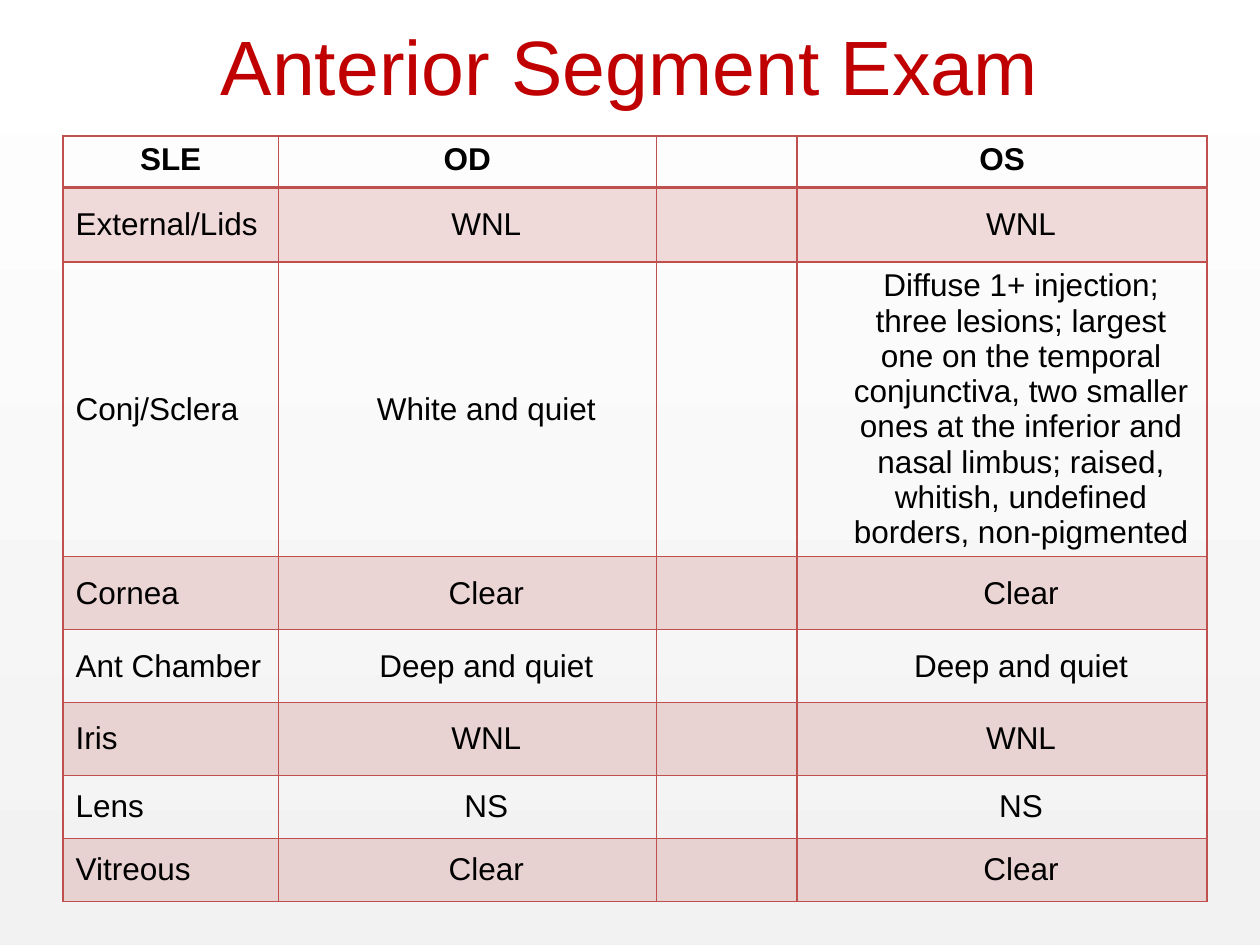
import dataclasses
import typing

import lxml.etree
import pptx
import pptx.dml.color
import pptx.enum.text
import pptx.oxml.ns
import pptx.util

Cm = pptx.util.Cm
Pt = pptx.util.Pt
Color = pptx.dml.color.RGBColor
Align = pptx.enum.text.PP_ALIGN
Anchor = pptx.enum.text.MSO_ANCHOR
qn = pptx.oxml.ns.qn


@dataclasses.dataclass(frozen=True)
class Theme:
    font: str = "Arial"
    title_color: str = "C00000"
    text_color: str = "000000"
    accent: str = "C0504D"
    page_bottom: str = "F2F2F2"
    page_top: str = "FFFFFF"
    title_size: float = 44
    cell_size: float = 18
    band_opacity: int = 20
    line: float = 1
    header_line: float = 2


@dataclasses.dataclass(frozen=True)
class ExamRow:
    structure: str
    right_eye: str
    left_eye: str
    height: float  # centimetres


THEME = Theme()
COLUMN_WIDTHS = (4.34, 7.62, 2.84, 8.26)
EXAM = (
    ExamRow("SLE", "OD", "OS", 1.04),
    ExamRow("External/Lids", "WNL", "WNL", 1.5),
    ExamRow(
        "Conj/Sclera",
        "White and quiet",
        "Diffuse 1+ injection; three lesions; largest one on the temporal "
        "conjunctiva, two smaller ones at the inferior and nasal limbus; "
        "raised, whitish, undefined borders, non-pigmented",
        1.47,
    ),
    ExamRow("Cornea", "Clear", "Clear", 1.47),
    ExamRow("Ant Chamber", "Deep and quiet", "Deep and quiet", 1.47),
    ExamRow("Iris", "WNL", "WNL", 1.47),
    ExamRow("Lens", "NS", "NS", 1.27),
    ExamRow("Vitreous", "Clear", "Clear", 1.27),
)


def style_paragraph(para: typing.Any, size: float, color: str,
                    align: Align, bold: bool = False) -> None:
    para.alignment = align
    para.font.name = THEME.font
    para.font.size = Pt(size)
    para.font.bold = bold
    para.font.color.rgb = Color.from_string(color)


def paint_page(page: typing.Any) -> None:
    fill = page.background.fill
    fill.gradient()
    fill.gradient_angle = 90
    for stop, color in zip(fill.gradient_stops, (THEME.page_bottom, THEME.page_top)):
        stop.color.rgb = Color.from_string(color)


def write_title(page: typing.Any, text: str) -> None:
    title = page.shapes.title
    title.left, title.top = Cm(1.27), Cm(-0.28)
    title.width, title.height = Cm(22.86), Cm(3.18)
    title.text_frame.text = text
    title.text_frame.vertical_anchor = Anchor.MIDDLE
    style_paragraph(title.text_frame.paragraphs[0], THEME.title_size,
                    THEME.title_color, Align.CENTER)


def fill_cell(cell: typing.Any, banded: bool) -> None:
    if not banded:
        cell.fill.background()
        return
    cell.fill.solid()
    cell.fill.fore_color.rgb = Color.from_string(THEME.accent)
    color = cell._tc.tcPr.find(".//" + qn("a:srgbClr"))
    lxml.etree.SubElement(color, qn("a:alpha"), val=str(THEME.band_opacity * 1000))


def border_cell(cell: typing.Any, top: float, bottom: float) -> None:
    sides = {"L": THEME.line, "R": THEME.line, "T": top, "B": bottom}
    properties = cell._tc.get_or_add_tcPr()
    # Borders come before the fill in the cell properties
    for index, (side, width) in enumerate(sides.items()):
        line = lxml.etree.Element(qn("a:ln" + side), w=str(Pt(width)))
        solid = lxml.etree.SubElement(line, qn("a:solidFill"))
        lxml.etree.SubElement(solid, qn("a:srgbClr"), val=THEME.accent)
        properties.insert(index, line)


def draw_cell(cell: typing.Any, text: str, row: int, column: int) -> None:
    header = row == 0
    cell.text = text
    centered = header or column > 0
    style_paragraph(cell.text_frame.paragraphs[0], THEME.cell_size, THEME.text_color,
                    Align.CENTER if centered else Align.LEFT, bold=header)
    if not header:
        cell.vertical_anchor = Anchor.MIDDLE
        if text and column > 0:
            cell.margin_left = Cm(1.02)
    fill_cell(cell, banded=row % 2 == 1)
    border_cell(cell,
                top=THEME.header_line if row == 1 else THEME.line,
                bottom=THEME.header_line if header else THEME.line)


def draw_exam_table(page: typing.Any) -> None:
    height = Cm(15.88)
    frame = page.shapes.add_table(len(EXAM), len(COLUMN_WIDTHS),
                                  Cm(1.27), Cm(2.74), Cm(23.06), height)
    table = frame.table
    table.first_row = table.horz_banding = False
    for column, width in zip(table.columns, COLUMN_WIDTHS):
        column.width = Cm(width)
    for row, entry in enumerate(EXAM):
        table.rows[row].height = Cm(entry.height)
        texts = (entry.structure, entry.right_eye, "", entry.left_eye)
        for column, text in enumerate(texts):
            draw_cell(table.cell(row, column), text, row, column)
    # The long finding makes its row grow, so the frame keeps its full height
    frame.height = height


def main() -> None:
    deck = pptx.Presentation()
    deck.slide_width, deck.slide_height = Cm(25.4), Cm(19.05)
    page = deck.slides.add_slide(deck.slide_layouts[5])
    paint_page(page)
    write_title(page, "Anterior Segment Exam")
    draw_exam_table(page)
    deck.save("out.pptx")


if __name__ == "__main__":
    main()
